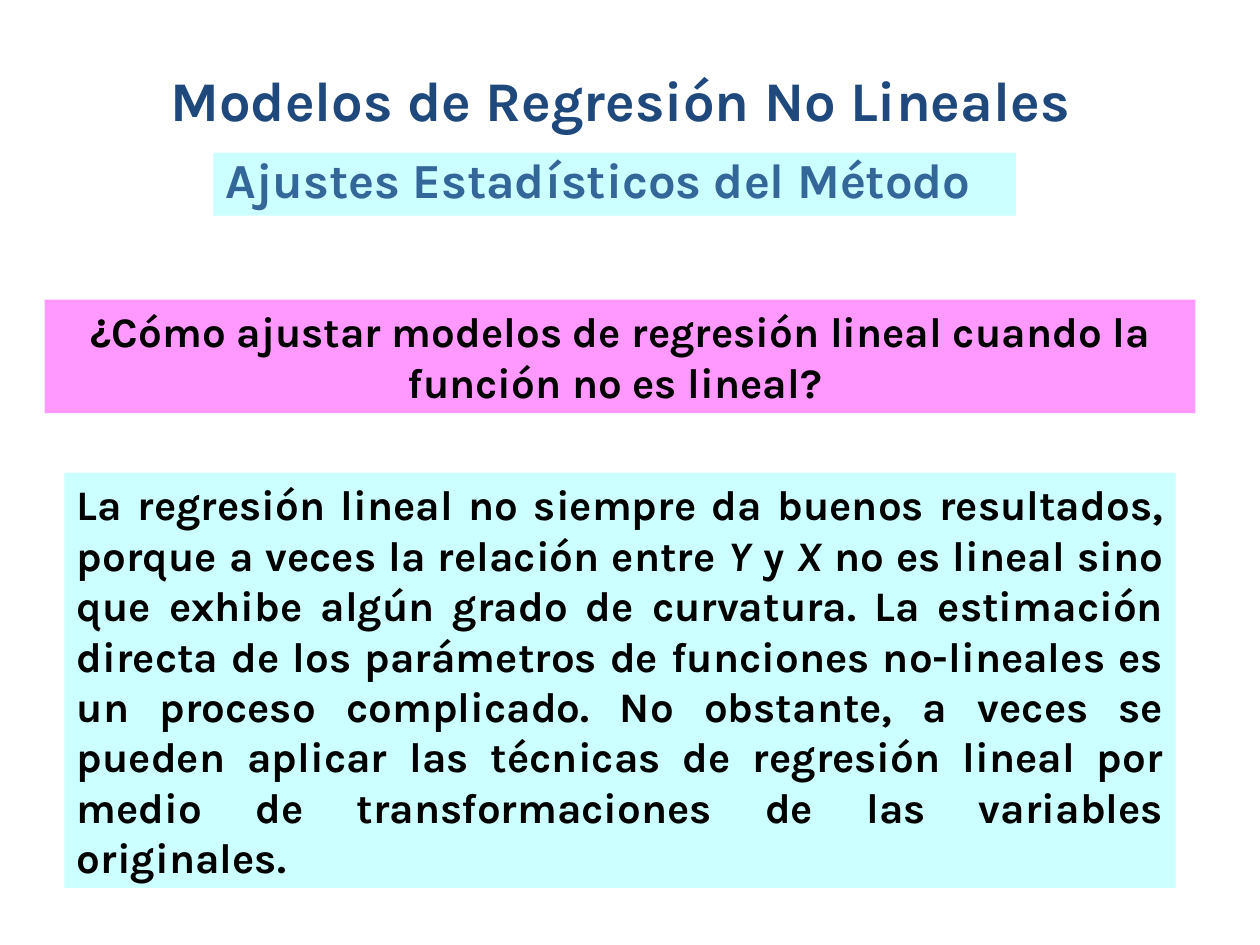
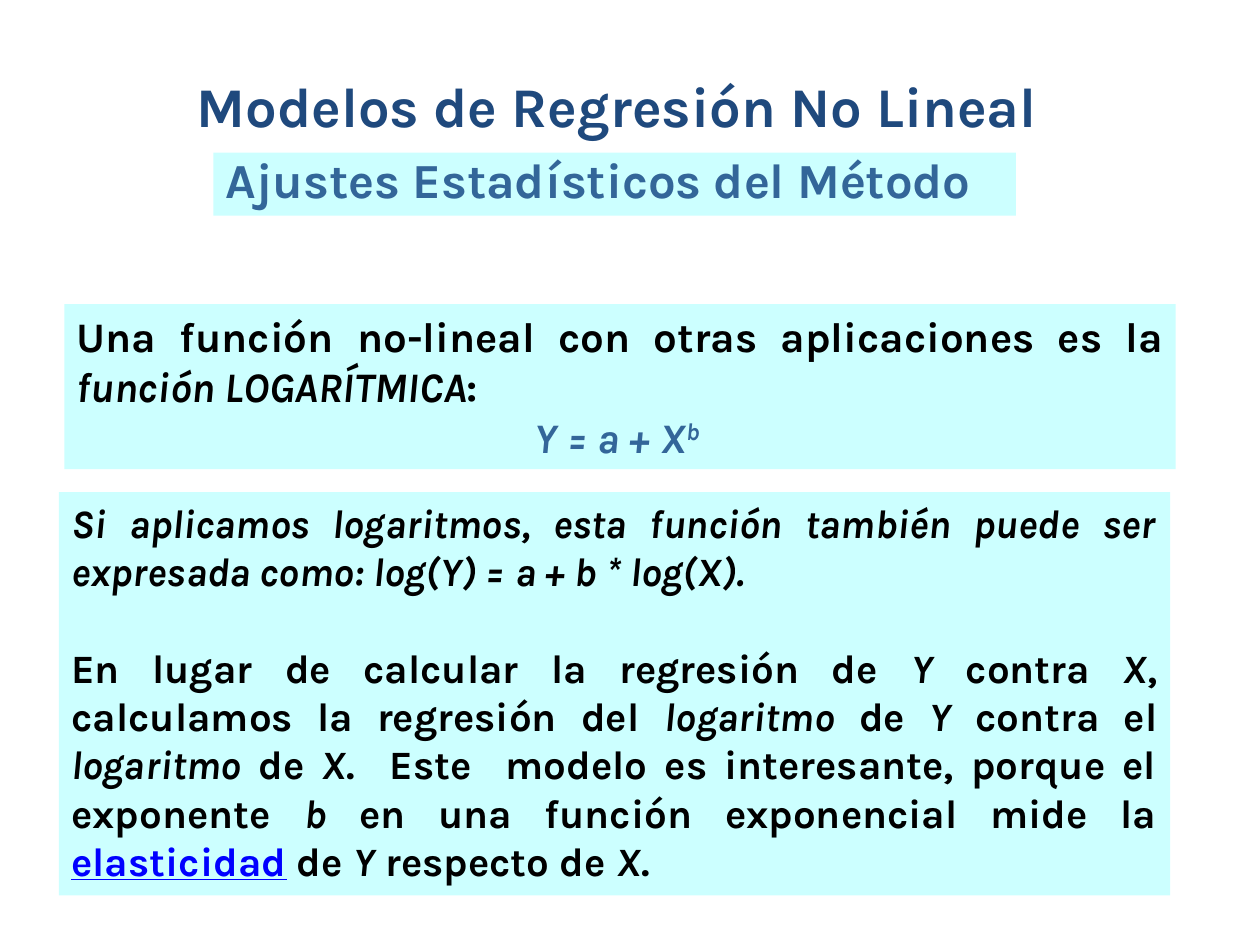
from dataclasses import dataclass

from pptx import Presentation
from pptx.dml.color import RGBColor
from pptx.enum.shapes import MSO_SHAPE
from pptx.enum.text import MSO_ANCHOR, PP_ALIGN
from pptx.util import Cm, Pt

RECTANGLE = MSO_SHAPE.RECTANGLE
TOP = MSO_ANCHOR.TOP
LEFT, CENTER, JUSTIFY = PP_ALIGN.LEFT, PP_ALIGN.CENTER, PP_ALIGN.JUSTIFY


@dataclass(frozen=True)
class Theme:
    font: str = "Karla"
    title_colour: str = "1F497D"
    accent: str = "336699"
    ink: str = "000000"
    link: str = "0000FF"
    aqua: str = "CCFFFF"
    pink: str = "FF99FF"
    title_size: float = 32
    subtitle_size: float = 28
    body_size: float = 24
    detail_size: float = 23


THEME = Theme()


@dataclass(frozen=True)
class Span:
    text: str
    italic: bool = False
    colour: str = THEME.ink
    underline: bool = False
    raised: bool = False


@dataclass(frozen=True)
class Paragraph:
    spans: list
    align: PP_ALIGN = JUSTIFY
    space_before: float = 0
    line_spacing: float = 1.0


def marked(text):
    """Split text into spans; words between underscores are italic."""
    return [Span(part, italic=index % 2 == 1)
            for index, part in enumerate(text.split("_")) if part]


class SlideBuilder:
    def __init__(self, deck, theme):
        self.deck = deck
        self.theme = theme
        self.page = None

    def new_page(self):
        self.page = self.deck.slides.add_slide(self.deck.slide_layouts[6])

    def fill_text(self, box, paragraphs, size):
        frame = box.text_frame
        frame.word_wrap = True
        frame.vertical_anchor = TOP
        for index, paragraph in enumerate(paragraphs):
            para = frame.add_paragraph() if index else frame.paragraphs[0]
            para.alignment = paragraph.align
            para.space_before = Pt(paragraph.space_before)
            para.line_spacing = paragraph.line_spacing
            for span in paragraph.spans:
                self.add_span(para, span, size)

    def add_span(self, para, span, size):
        run = para.add_run()
        run.text = span.text
        font = run.font
        font.name = self.theme.font
        font.size = Pt(size)
        font.bold = True
        font.italic = span.italic
        font.underline = span.underline
        font.color.rgb = RGBColor.from_string(span.colour)
        if span.raised:
            run._r.get_or_add_rPr().set("baseline", "30000")

    def title(self, text, left, top, width):
        box = self.page.shapes.add_textbox(Cm(left), Cm(top), Cm(width), Cm(1.62))
        spans = [Span(text, colour=self.theme.title_colour)]
        self.fill_text(box, [Paragraph(spans, LEFT)], self.theme.title_size)

    def panel(self, bounds, paragraphs, size, fill):
        box = self.page.shapes.add_shape(RECTANGLE, *map(Cm, bounds))
        box.shadow.inherit = False
        box.fill.solid()
        box.fill.fore_color.rgb = RGBColor.from_string(fill)
        box.line.fill.background()
        self.fill_text(box, paragraphs, size)

    def subtitle(self):
        spans = [Span("Ajustes Estadísticos del Método", colour=self.theme.accent)]
        self.panel((4.3, 3.08, 16.18, 1.27),
                   [Paragraph(spans, LEFT, line_spacing=0.85)],
                   self.theme.subtitle_size, self.theme.aqua)


def add_question_page(builder):
    theme = builder.theme
    builder.new_page()
    builder.title("Modelos de Regresión No Lineales", 3.18, 1.19, 20.02)
    builder.subtitle()
    question = marked("¿Cómo ajustar modelos de regresión lineal cuando la "
                      "función no es lineal? ")
    builder.panel((0.9, 6.04, 23.2, 2.29), [Paragraph(question, CENTER)],
                  theme.body_size, theme.pink)
    answer = marked(
        "La regresión lineal no siempre da buenos resultados, porque a veces la "
        "relación entre _Y_ y _X_ no es lineal sino que exhibe algún grado de "
        "curvatura. La estimación directa de los parámetros de funciones "
        "no-lineales es un proceso complicado. No obstante, a veces se pueden "
        "aplicar las técnicas de regresión lineal por medio de transformaciones "
        "de las variables originales.")
    builder.panel((1.3, 9.53, 22.4, 8.37), [Paragraph(answer)],
                  theme.body_size, theme.aqua)


def add_logarithm_page(builder):
    theme = builder.theme
    builder.new_page()
    builder.title("Modelos de Regresión No Lineal", 3.71, 1.32, 18.6)
    builder.subtitle()
    function_name = marked("Una función no-lineal con otras aplicaciones es la "
                           "_función LOGARÍTMICA_:")
    formula = [Span("Y = a + X", italic=True, colour=theme.accent),
               Span("b ", italic=True, colour=theme.accent, raised=True)]
    builder.panel((1.3, 6.13, 22.4, 3.33),
                  [Paragraph(function_name), Paragraph(formula, CENTER)],
                  theme.body_size, theme.aqua)
    log_form = marked("_Si aplicamos logaritmos, esta función también puede ser "
                      "expresada como: log(Y) = a + b * log(X)._")
    elasticity = [
        *marked("En lugar de calcular la regresión de _Y_ contra _X_, calculamos "
                "la regresión del _logaritmo_ de _Y_ contra el _logaritmo_ de _X_.  "
                "Este  modelo es interesante, porque el exponente _b_ en una "
                "función exponencial mide la "),
        Span("elasticidad", colour=theme.link, underline=True),
        *marked(" de _Y_ respecto de _X_."),
    ]
    builder.panel((1.19, 9.92, 22.4, 8.13),
                  [Paragraph(log_form), Paragraph(elasticity, space_before=27.6)],
                  theme.detail_size, theme.aqua)


def main():
    deck = Presentation()
    deck.slide_width, deck.slide_height = Cm(25.4), Cm(19.05)
    builder = SlideBuilder(deck, THEME)
    add_question_page(builder)
    add_logarithm_page(builder)
    deck.save("out.pptx")


if __name__ == "__main__":
    main()
